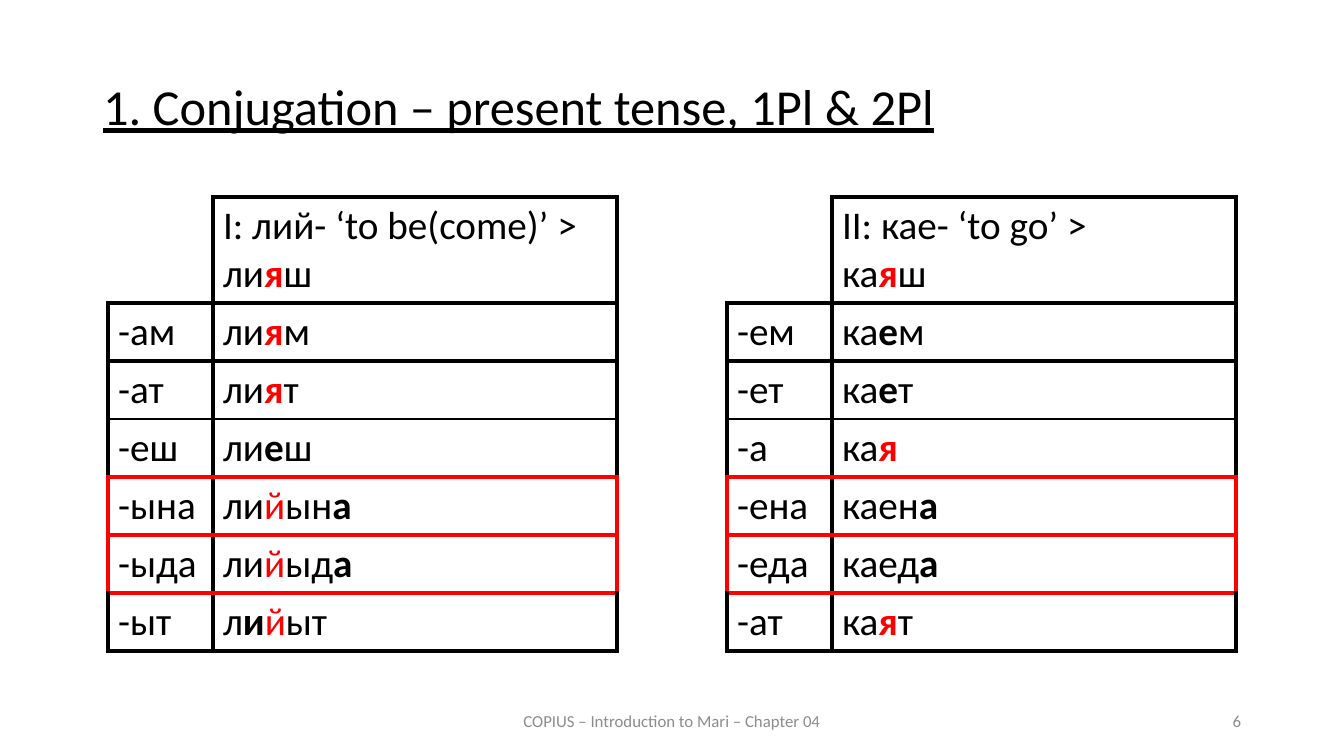
"""Build the Mari present-tense conjugation slide with its two paradigm tables."""
from pptx import Presentation
from pptx.dml.color import RGBColor
from pptx.enum.text import MSO_ANCHOR as Anchor, MSO_AUTO_SIZE as AutoSize, PP_ALIGN as Align
from pptx.oxml.ns import qn
from pptx.util import Emu, Pt
from lxml.etree import SubElement

COLORS = {"black": "000000", "red": "FF0000", "gray": "8C8C8C"}
THICK, THIN, MARKED = ("black", 3), ("black", 1), ("red", 3)
ROW_LINES = [THICK, THICK, THICK, THIN, MARKED, MARKED, MARKED, THICK]
MARKED_ROWS = (4, 5)
COLUMN_WIDTHS = (105, 404)
HEADER_HEIGHT, ROW_HEIGHT = 106, 58

FIRST_CONJUGATION = [
    ("", "I: лий- ‘to be(come)’ >\nли|!*я|ш"),
    ("-ам", "ли|!*я|м"),
    ("-ат", "ли|!*я|т"),
    ("-еш", "ли|*е|ш"),
    ("-ына", "ли|!й|ын|*а"),
    ("-ыда", "ли|!й|ыд|*а"),
    ("-ыт", "л|*и|!й|ыт"),
]
SECOND_CONJUGATION = [
    ("", "II: кае- ‘to go’ >\nка|!*я|ш"),
    ("-ем", "ка|*е|м"),
    ("-ет", "ка|*е|т"),
    ("-а", "ка|!*я"),
    ("-ена", "каен|*а"),
    ("-еда", "каед|*а"),
    ("-ат", "ка|!*я|т"),
]


class Slide:
    """Hold the page and its style; in cell text, | splits spans, ! is red and * is bold."""

    font_name = "Calibri"
    scale = 914400 / 100.8

    def __init__(self, deck):
        self.page = deck.slides.add_slide(deck.slide_layouts[5])

    def px(self, length):
        return Emu(round(length * self.scale))

    def style(self, font, size, color="black"):
        font.name, font.size = self.font_name, Pt(size)
        font.color.rgb = RGBColor.from_string(COLORS[color])

    def place(self, shape, bounds):
        shape.left, shape.top, shape.width, shape.height = map(self.px, bounds)

    def title(self, text, bounds):
        box = self.page.shapes.title
        self.place(box, bounds)
        frame = box.text_frame
        frame.text = text
        frame.auto_size, frame.vertical_anchor = AutoSize.NONE, Anchor.TOP
        para = frame.paragraphs[0]
        para.alignment, para.line_spacing = Align.LEFT, 0.9
        self.style(para.font, 36)
        para.font.underline = True

    def label(self, text, bounds, alignment):
        box = self.page.shapes.add_textbox(*map(self.px, bounds))
        frame = box.text_frame
        frame.word_wrap, frame.vertical_anchor = True, Anchor.MIDDLE
        para = frame.paragraphs[0]
        para.text, para.alignment = text, alignment
        self.style(para.font, 12, "gray")

    def border(self, cell, side, line):
        edge = SubElement(cell._tc.get_or_add_tcPr(), qn(f"a:ln{side}"))
        if line is None:
            edge.set("w", "0")
            SubElement(edge, qn("a:noFill"))
            return
        color, width = line
        edge.set("w", str(Pt(width)))
        fill = SubElement(edge, qn("a:solidFill"))
        SubElement(fill, qn("a:srgbClr")).set("val", COLORS[color])

    def cell_text(self, cell, text):
        frame = cell.text_frame
        for index, line in enumerate(text.split("\n")):
            para = frame.add_paragraph() if index else frame.paragraphs[0]
            self.style(para.font, 28)
            for piece in filter(None, line.split("|")):
                span = para.add_run()
                span.text = piece.lstrip("!*")
                self.style(span.font, 28, "red" if "!" in piece else "black")
                span.font.bold = "*" in piece

    def paradigm(self, rows, left, top):
        height = HEADER_HEIGHT + ROW_HEIGHT * (len(rows) - 1)
        bounds = (left, top, sum(COLUMN_WIDTHS), height)
        table = self.page.shapes.add_table(len(rows), 2, *map(self.px, bounds)).table
        table.first_row = table.horz_banding = False
        for column, width in zip(table.columns, COLUMN_WIDTHS):
            column.width = self.px(width)
        for r, texts in enumerate(rows):
            table.rows[r].height = self.px(ROW_HEIGHT if r else HEADER_HEIGHT)
            outer = MARKED if r in MARKED_ROWS else THICK
            for c, text in enumerate(texts):
                cell = table.cell(r, c)
                corner = r == c == 0
                self.cell_text(cell, text)
                self.border(cell, "L", None if corner else THICK if c else outer)
                self.border(cell, "R", outer if c else THICK)
                self.border(cell, "T", None if corner else ROW_LINES[r])
                self.border(cell, "B", ROW_LINES[r + 1])
                cell.fill.background()


def main():
    deck = Presentation()
    deck.slide_width, deck.slide_height = Emu(12192000), Emu(6858000)
    slide = Slide(deck)
    slide.title("1. Conjugation – present tense, 1Pl & 2Pl", (93, 77, 1159, 64))
    slide.paradigm(FIRST_CONJUGATION, 108, 197)
    slide.paradigm(SECOND_CONJUGATION, 727, 197)
    slide.label("COPIUS – Introduction to Mari – Chapter 04", (445, 701, 454, 40), Align.CENTER)
    slide.label("6", (949, 701, 302, 40), Align.RIGHT)
    deck.save("out.pptx")


if __name__ == "__main__":
    main()
